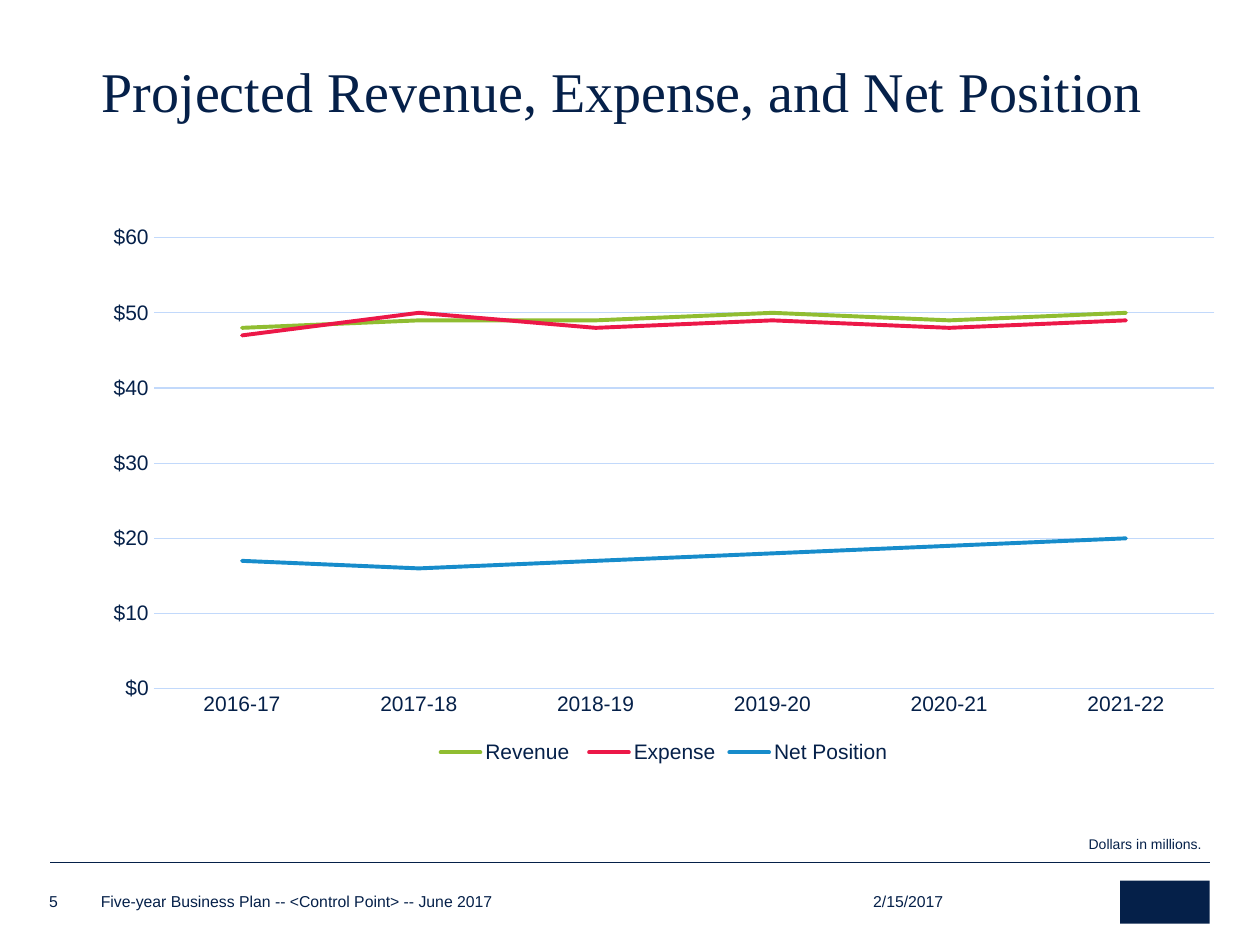
from pptx import Presentation
from pptx import util as u
from pptx.chart.data import CategoryChartData
from pptx.dml.color import RGBColor
from pptx.enum import chart as ch, shapes, text
from pptx.oxml.ns import qn
from lxml import etree

COLORS = {"navy": "052049", "grid": "C2D9FB", "green": "90BD31",
          "red": "EC1848", "blue": "178CCB"}
YEARS = ["2016-17", "2017-18", "2018-19", "2019-20", "2020-21", "2021-22"]
SERIES = [
    ("Revenue ", "green", (48, 49, 49, 50, 49, 50)),
    ("Expense", "red", (47, 50, 48, 49, 48, 49)),
    ("Net Position", "blue", (17, 16, 17, 18, 19, 20)),
]
TITLE = {"size": 32, "name": "Times New Roman", "spacing": 0.85, "inset": (0.1, 0.05)}
FOOTER = {"size": 9, "anchor": text.MSO_ANCHOR.BOTTOM}
NOTE = {"size": 8, "spacing": 0.9}
TEXTS = [
    ("Projected Revenue, Expense, and Net Position", (0.71, 0.48, 8.85, 0.57), TITLE),
    ("2/15/2017", (6.93, 7.06, 1.01, 0.17), FOOTER),
    ("Five-year Business Plan -- <Control Point> -- June 2017",
     (0.8, 7.08, 4.71, 0.15), FOOTER),
    ("5", (0.39, 7.06, 0.27, 0.17), FOOTER),
    ("Dollars in millions.", (8.64, 6.65, 1.66, 0.12), NOTE),
]
CHART_BOX = (0.72, 1.71, 9.1, 4.39)
LOGO_BOX = (8.89, 6.99, 0.71, 0.34)
RULE = (0.4, 6.84, 9.6, 6.84)


def inches(values):
    return [u.Inches(v) for v in values]


def rgb(name):
    return RGBColor.from_string(COLORS[name])


def set_font(font, size, name="Arial"):
    for key, value in {"size": u.Pt(size), "name": name}.items():
        setattr(font, key, value)
    font.color.rgb = rgb("navy")


def set_line(line, color, width):
    line.color.rgb = rgb(color)
    line.width = u.Pt(width)


def add_text(slide, words, box, style):
    tf = slide.shapes.add_textbox(*inches(box)).text_frame
    across, down = inches(style.get("inset", (0, 0)))
    frame = {"word_wrap": True, "margin_left": across, "margin_right": across,
             "margin_top": down, "margin_bottom": down,
             "vertical_anchor": style.get("anchor", text.MSO_ANCHOR.TOP)}
    for key, value in frame.items():
        setattr(tf, key, value)
    p = tf.paragraphs[0]
    p.line_spacing = style.get("spacing", 1.0)
    r = p.add_run()
    r.text = words
    set_font(r.font, style["size"], style.get("name", "Arial"))


def add_footer_marks(slide):
    """Draw the rule above the footer and a plain block for the logo."""
    rule = slide.shapes.add_connector(shapes.MSO_CONNECTOR.STRAIGHT, *inches(RULE))
    set_line(rule.line, "navy", 0.25)
    etree.SubElement(rule._element.spPr, qn("a:effectLst"))
    sp = slide.shapes.add_shape(shapes.MSO_SHAPE.RECTANGLE, *inches(LOGO_BOX))
    sp.shadow.inherit = False
    sp.fill.solid()
    sp.fill.fore_color.rgb = rgb("navy")
    sp.line.fill.background()


def add_projection_chart(slide):
    data = CategoryChartData()
    data.categories = YEARS
    for name, _, values in SERIES:
        data.add_series(name, values)
    chart = slide.shapes.add_chart(
        ch.XL_CHART_TYPE.LINE, *inches(CHART_BOX), data).chart
    set_font(chart.font, 10)
    chart.has_title = False
    chart.has_legend = True
    chart.legend.position = ch.XL_LEGEND_POSITION.BOTTOM
    chart.legend.include_in_layout = False
    set_font(chart.legend.font, 12)
    chart.plots[0].vary_by_categories = False

    for axis in (chart.category_axis, chart.value_axis):
        axis.major_tick_mark = axis.minor_tick_mark = ch.XL_TICK_MARK.NONE
        set_font(axis.tick_labels.font, 12)
    set_line(chart.category_axis.format.line, "grid", 0.75)
    values = chart.value_axis
    values.minimum_scale, values.maximum_scale, values.major_unit = 0, 60, 10
    values.format.line.fill.background()
    set_line(values.major_gridlines.format.line, "grid", 0.75)
    values.tick_labels.number_format = '"$"#,##0'
    values.tick_labels.number_format_is_linked = False

    for series, (_, color, _) in zip(chart.plots[0].series, SERIES):
        series.smooth = False
        series.marker.style = ch.XL_MARKER_STYLE.NONE
        set_line(series.format.line, color, 2.25)
        series.format.line._ln.set("cap", "rnd")


def main():
    prs = Presentation()
    prs.slide_width, prs.slide_height = inches((10, 7.5))
    slide = prs.slides.add_slide(prs.slide_layouts[6])
    add_footer_marks(slide)
    add_projection_chart(slide)
    for words, box, style in TEXTS:
        add_text(slide, words, box, style)
    prs.save("out.pptx")


if __name__ == "__main__":
    main()
